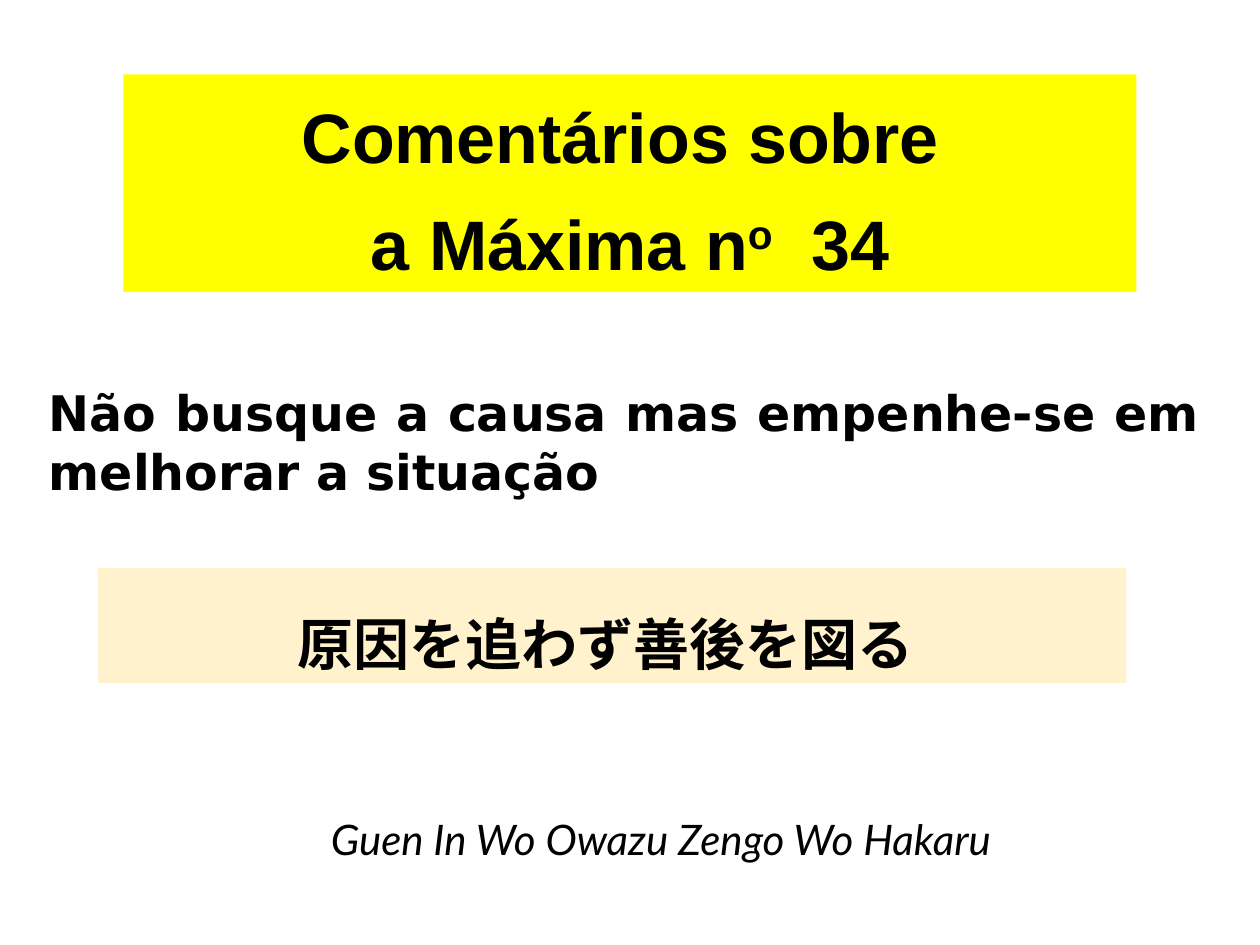
from pptx import Presentation
from pptx import util as u
from pptx.dml.color import RGBColor
from pptx.enum import shapes, text

COLOURS = {"ink": "000000", "title": "FFFF00", "maxim": "FFF2CC"}
ALIGN = text.PP_ALIGN
ANCHOR = text.MSO_ANCHOR


def colour(name):
    return RGBColor.from_string(COLOURS[name])


def add_span(para, wording, font="Arial", size=40, bold=False, italic=False,
             raised=0, spacing=0):
    """Add formatted text; raised is a percentage, spacing is in points."""
    span = para.add_run()
    span.text = wording
    span.font.name = font
    span.font.size = u.Pt(size)
    span.font.bold = bold
    span.font.italic = italic
    span.font.color.rgb = colour("ink")
    properties = span.font._element
    if raised:
        properties.set("baseline", str(raised * 1000))
    if spacing:
        properties.set("spc", str(spacing * 100))


class Slide:
    def __init__(self, deck):
        self.page = deck.slides.add_slide(deck.slide_layouts[6])

    def fill_text(self, box, lines, align=ALIGN.CENTER, anchor=ANCHOR.TOP,
                  line_spacing=None, after=0, **style):
        """Fill a box with lines, each a list of (wording, extra format)."""
        frame = box.text_frame
        frame.word_wrap = True
        frame.auto_size = text.MSO_AUTO_SIZE.NONE
        frame.vertical_anchor = anchor
        for index, spans in enumerate(lines):
            para = frame.add_paragraph() if index else frame.paragraphs[0]
            para.alignment = align
            para.line_spacing = line_spacing
            para.space_after = u.Pt(after)
            for wording, extra in spans:
                add_span(para, wording, **{**style, **extra})

    def panel(self, place, fill, lines, **style):
        box = self.page.shapes.add_shape(
            shapes.MSO_SHAPE.RECTANGLE, *map(u.Inches, place))
        box.shadow.inherit = False
        box.fill.solid()
        box.fill.fore_color.rgb = colour(fill)
        box.line.fill.background()
        self.fill_text(box, lines, **style)

    def label(self, place, wording, **style):
        box = self.page.shapes.add_textbox(*map(u.Inches, place))
        self.fill_text(box, [[(wording, {})]], **style)


def main():
    deck = Presentation()
    deck.slide_width, deck.slide_height = u.Inches(10), u.Inches(7.5)
    slide = Slide(deck)

    # Title panel
    slide.panel(
        (0.98, 0.59, 8.04, 1.73), "title",
        [[("Comentários sobre ", {})],
         [("a Máxima n", {}), ("o", {"raised": 30}),
          (" ", {"spacing": 11}), ("34", {})]],
        line_spacing=1.15, after=6, bold=True)

    # Maxim in Japanese
    slide.panel(
        (0.78, 4.51, 8.16, 0.91), "maxim", [[("原因を追わず善後を図る ", {})]],
        anchor=ANCHOR.BOTTOM, font="DejaVu Sans", size=32, bold=True)

    # Translation and reading
    slide.label(
        (0.29, 2.99, 9.32, 1.04),
        "Não busque a causa mas empenhe-se em melhorar a situação",
        align=ALIGN.JUSTIFY, font="DejaVu Sans", size=28, bold=True)
    slide.label(
        (0.98, 6.41, 8.53, 0.5), "Guen In Wo Owazu Zengo Wo Hakaru",
        font="Lato", size=24, italic=True)

    deck.save("out.pptx")


if __name__ == "__main__":
    main()
